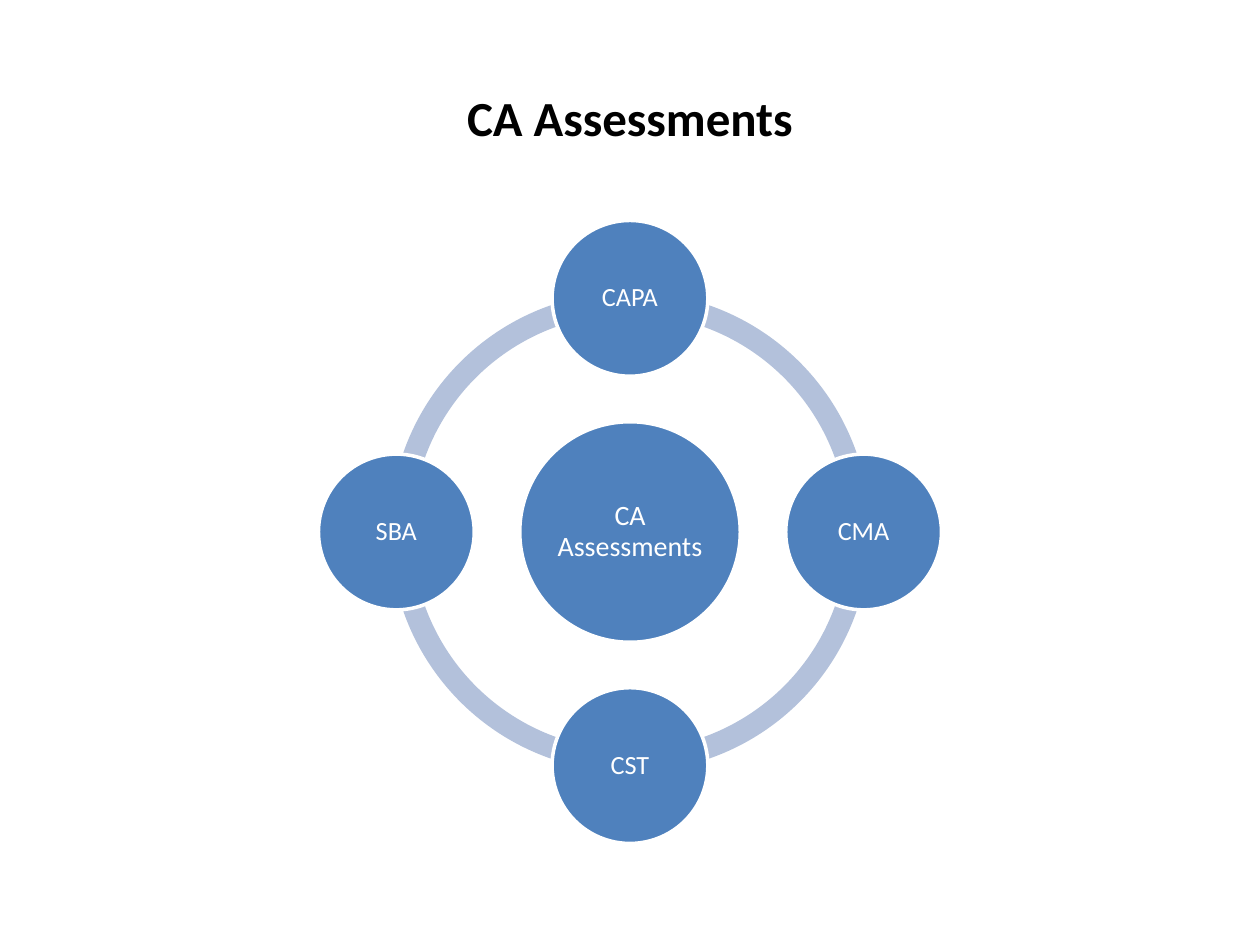
from math import cos, pi, sin

from pptx import Presentation
from pptx.dml.color import RGBColor
from pptx.enum.shapes import MSO_SHAPE
from pptx.enum.text import MSO_ANCHOR, PP_ALIGN
from pptx.util import Pt

BLACK = RGBColor(0x00, 0x00, 0x00)
WHITE = RGBColor(0xFF, 0xFF, 0xFF)
BLUE = RGBColor(0x4F, 0x81, 0xBD)
PALE_BLUE = RGBColor(0xB3, 0xC1, 0xDB)
FONT = "Calibri"
QUARTER_TURN = 54
FULL_TURN = 4 * QUARTER_TURN


def write_label(frame, text, size, color, bold=False):
    frame.word_wrap = True
    frame.vertical_anchor = MSO_ANCHOR.MIDDLE
    paragraph = frame.paragraphs[0]
    paragraph.text = text
    paragraph.alignment = PP_ALIGN.CENTER
    paragraph.font.name = FONT
    paragraph.font.size = Pt(size)
    paragraph.font.bold = bold
    paragraph.font.color.rgb = color
    return paragraph


def add_title(slide, left, top, width, height, text):
    title = slide.shapes.add_textbox(Pt(left), Pt(top), Pt(width), Pt(height))
    write_label(title.text_frame, text, 28, BLACK, bold=True)


def add_round(slide, preset, center_x, center_y, diameter, color):
    part = slide.shapes.add_shape(
        preset, Pt(center_x - diameter / 2), Pt(center_y - diameter / 2), Pt(diameter), Pt(diameter)
    )
    part.shadow.inherit = False
    part.fill.solid()
    part.fill.fore_color.rgb = color
    part.line.fill.background()
    return part


def add_circle(slide, center_x, center_y, diameter, text, size):
    circle = add_round(slide, MSO_SHAPE.OVAL, center_x, center_y, diameter, BLUE)
    circle.line.color.rgb = WHITE
    circle.line.width = Pt(2)
    frame = circle.text_frame
    frame.margin_left = frame.margin_right = Pt(1.5)
    frame.margin_top = frame.margin_bottom = Pt(1.5)
    write_label(frame, text, size, WHITE).line_spacing = 0.9


def add_radial_cycle(slide, left, top, side, hub_text, node_texts):
    center_x, center_y = left + side / 2, top + side / 2
    node_diameter = side / 4
    orbit = (side - node_diameter) / 2
    step = 2 * pi / len(node_texts)

    for quarter in range(4):
        arc = add_round(slide, MSO_SHAPE.BLOCK_ARC, center_x, center_y, 274.4, PALE_BLUE)
        start = quarter * QUARTER_TURN
        arc.adjustments[0] = start
        arc.adjustments[1] = (start + QUARTER_TURN) % FULL_TURN
        arc.adjustments[2] = 0.046

    add_circle(slide, center_x, center_y, 126, hub_text, 16)
    for index, node_text in enumerate(node_texts):
        angle = index * step
        add_circle(
            slide,
            center_x + orbit * sin(angle),
            center_y - orbit * cos(angle),
            node_diameter,
            node_text,
            15,
        )


def main():
    presentation = Presentation()
    presentation.slide_width = Pt(720)
    presentation.slide_height = Pt(540)
    slide = presentation.slides.add_slide(presentation.slide_layouts[6])
    add_title(slide, 36, 21.6, 648, 90, "CA Assessments")
    add_radial_cycle(slide, 182, 126, 356, "CA Assessments", ["CAPA", "CMA", "CST", "SBA"])
    presentation.save("out.pptx")


if __name__ == "__main__":
    main()
